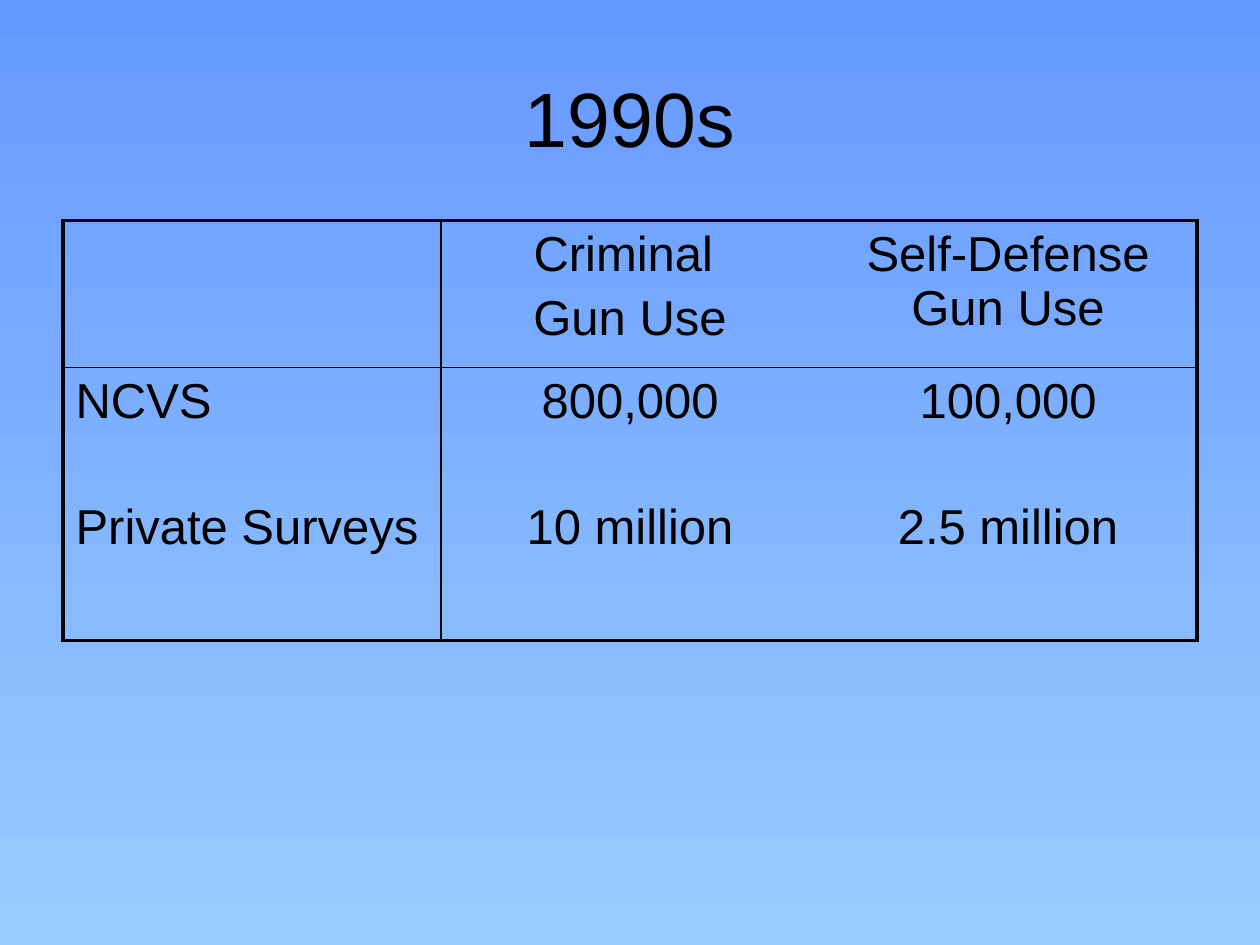
from lxml import etree
from pptx import Presentation
from pptx.dml.color import RGBColor
from pptx.enum.text import MSO_ANCHOR, PP_ALIGN
from pptx.oxml.ns import qn
from pptx.util import Pt

CENTER, LEFT = PP_ALIGN.CENTER, PP_ALIGN.LEFT
MIDDLE = MSO_ANCHOR.MIDDLE

TITLE = "1990s"
# Each cell is a list of paragraphs.
ROWS = [
    [[], ["Criminal ", "Gun Use"], ["Self-Defense Gun Use"]],
    [["NCVS"], ["800,000"], ["100,000"]],
    [["Private Surveys"], ["10 million"], ["2.5 million"]],
]
ROW_HEIGHTS = [84, 72, 84]
COLUMN_WIDTH = 216
# Line widths in points, from first edge to last; 0 is no line.
VERTICAL_RULES = [2.25, 1, 0, 2.25]
HORIZONTAL_RULES = [2.25, 1, 0, 2.25]
BACKGROUND = ["6699FF", "99CCFF"]
BLACK = "000000"
FONT = "Arial"


def color(value):
    return RGBColor.from_string(value)


def add_text(paragraph, text, size, alignment):
    paragraph.alignment = alignment
    run = paragraph.add_run()
    run.text = text
    run.font.name = FONT
    run.font.size = Pt(size)
    run.font.color.rgb = color(BLACK)


def set_borders(cell, widths):
    """Draw cell borders; widths are left, right, top, bottom."""
    properties = cell._tc.get_or_add_tcPr()
    for index, (side, width) in enumerate(zip("LRTB", widths)):
        line = etree.Element(qn(f"a:ln{side}"), w=str(Pt(width)))
        if width:
            fill = etree.SubElement(line, qn("a:solidFill"))
            etree.SubElement(fill, qn("a:srgbClr"), val=BLACK)
        else:
            etree.SubElement(line, qn("a:noFill"))
        properties.insert(index, line)


presentation = Presentation()
presentation.slide_width, presentation.slide_height = Pt(720), Pt(540)
slide = presentation.slides.add_slide(presentation.slide_layouts[5])

background = slide.background.fill
background.gradient()
background.gradient_angle = 270
for stop, value in zip(background.gradient_stops, BACKGROUND):
    stop.color.rgb = color(value)

title = slide.shapes.title
title.left, title.top, title.width, title.height = Pt(36), Pt(21.6), Pt(648), Pt(90)
title.text_frame.vertical_anchor = MIDDLE
add_text(title.text_frame.paragraphs[0], TITLE, 44, CENTER)

column_count = len(ROWS[0])
table = slide.shapes.add_table(
    len(ROWS), column_count, Pt(36), Pt(126),
    Pt(COLUMN_WIDTH * column_count), Pt(sum(ROW_HEIGHTS))).table
table.first_row = table.horz_banding = False
for column in table.columns:
    column.width = Pt(COLUMN_WIDTH)

for r, (row, height) in enumerate(zip(ROWS, ROW_HEIGHTS)):
    table.rows[r].height = Pt(height)
    for c, lines in enumerate(row):
        cell = table.cell(r, c)
        cell.fill.background()
        set_borders(cell, VERTICAL_RULES[c:c + 2] + HORIZONTAL_RULES[r:r + 2])
        for i, text in enumerate(lines):
            frame = cell.text_frame
            paragraph = frame.add_paragraph() if i else frame.paragraphs[0]
            paragraph.space_before = Pt(5.6)
            add_text(paragraph, text, 28, CENTER if c else LEFT)

presentation.save("out.pptx")
